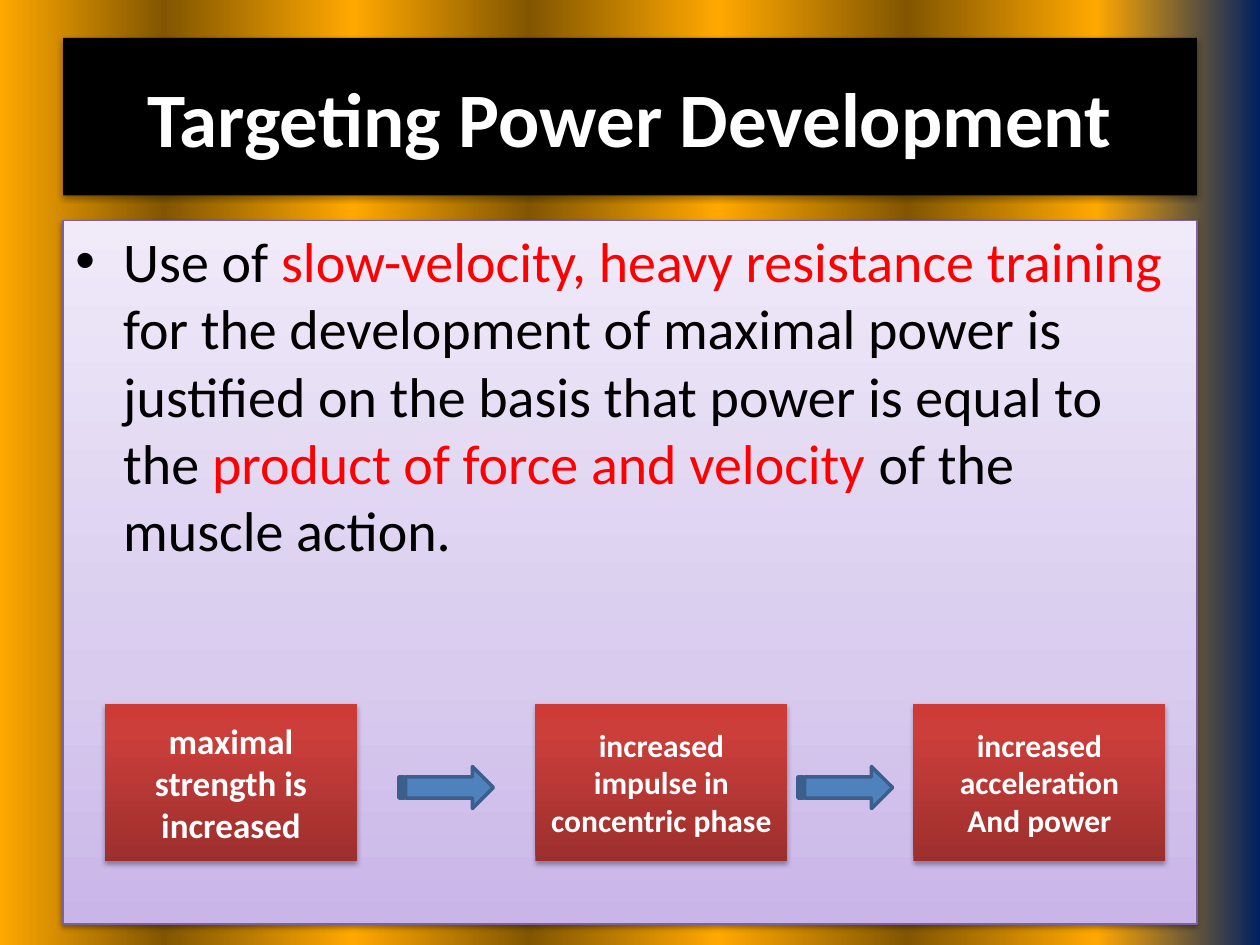
from lxml.etree import SubElement
from pptx import Presentation
from pptx.dml.color import RGBColor
from pptx.enum.shapes import MSO_SHAPE
from pptx.enum.text import MSO_ANCHOR, PP_ALIGN
from pptx.oxml.ns import qn
from pptx.util import Inches, Pt

color = RGBColor.from_string


def set_gradient(fill, owner, stops, angle):
    """Fill with (percent, colour) stops; the angle runs clockwise."""
    fill.gradient()
    gradient = owner.find(".//" + qn("a:gradFill"))
    for child in list(gradient):
        gradient.remove(child)
    stop_list = SubElement(gradient, qn("a:gsLst"))
    for percent, value in stops:
        stop = SubElement(stop_list, qn("a:gs"), pos=str(percent * 1000))
        SubElement(stop, qn("a:srgbClr"), val=value)
    SubElement(gradient, qn("a:lin"), ang=str(angle * 60000), scaled="0")


def add_shadow(shape, distance, opacity):
    """Cast a soft black shadow straight down."""
    shape.shadow.inherit = False
    effects = shape.element.spPr.find(qn("a:effectLst"))
    shadow = SubElement(effects, qn("a:outerShdw"), blurRad=str(Pt(3.1)),
                        dist=str(Pt(distance)), dir="5400000", rotWithShape="0")
    black = SubElement(shadow, qn("a:srgbClr"), val="000000")
    SubElement(black, qn("a:alpha"), val=str(opacity * 1000))


presentation = Presentation()
presentation.slide_width, presentation.slide_height = Inches(10), Inches(7.5)
slide = presentation.slides.add_slide(presentation.slide_layouts[5])
cell = presentation.slide_width // 120  # grid of 120 columns by 90 rows
margin, content_width = 6 * cell, 108 * cell

# Background: gold and brown bands with a navy right edge
bands = [(0, "002060"), (13, "FFA800"), (28, "825600"), (43, "FFA800"),
         (58, "825600"), (72, "FFA800"), (87, "825600"), (100, "FFA800")]
set_gradient(slide.background.fill, slide.element, bands, 180)

# Title bar
title = slide.shapes.title
title.left, title.top = margin, int(3.6 * cell)
title.width, title.height = content_width, 15 * cell
title.fill.solid()
title.fill.fore_color.rgb = color("000000")
add_shadow(title, 1.8, 35)
title.text_frame.text = "Targeting Power Development"
title.text_frame.vertical_anchor = MSO_ANCHOR.MIDDLE
paragraph = title.text_frame.paragraphs[0]
paragraph.alignment = PP_ALIGN.CENTER
paragraph.font.name, paragraph.font.size, paragraph.font.bold = "Calibri", Pt(44), True
paragraph.font.color.rgb = color("FFFFFF")

# Panel with the bulleted statement
panel = slide.shapes.add_shape(MSO_SHAPE.RECTANGLE, margin, 21 * cell,
                               content_width, 67 * cell)
set_gradient(panel.fill, panel.element,
             [(0, "C9B5E8"), (35, "D8CBEE"), (100, "F0EAF9")], 270)
panel.line.color.rgb, panel.line.width = color("7D60A0"), Pt(0.75)
add_shadow(panel, 1.6, 38)
panel.text_frame.vertical_anchor = MSO_ANCHOR.TOP
paragraph = panel.text_frame.paragraphs[0]
paragraph.alignment = PP_ALIGN.LEFT
paragraph.space_before = Pt(6.4)
paragraph.font.name, paragraph.font.size = "Calibri", Pt(32)
properties = paragraph._p.get_or_add_pPr()
properties.set("marL", str(Inches(0.38)))
properties.set("indent", str(-Inches(0.38)))
bullet_font = SubElement(properties, qn("a:buFont"), typeface="Arial")
bullet = SubElement(properties, qn("a:buChar"), char="•")
properties.find(qn("a:defRPr")).addprevious(bullet_font)
bullet_font.addnext(bullet)
for text, value in [
    ("Use of ", "000000"),
    ("slow-velocity, heavy resistance training ", "FF0000"),
    ("for the development of maximal power is justified on the basis "
     "that power is equal to the ", "000000"),
    ("product of force and velocity ", "FF0000"),
    ("of the muscle action.", "000000"),
]:
    run = paragraph.add_run()
    run.text = text
    run.font.color.rgb = color(value)

# Chain of effects: red boxes
for column, size, text in [
    (10, 20, "maximal strength is increased"),
    (51, 18, "increased impulse in concentric phase"),
    (87, 18, "increased acceleration\nAnd power"),
]:
    box = slide.shapes.add_shape(MSO_SHAPE.RECTANGLE, column * cell, 67 * cell,
                                 24 * cell, 15 * cell)
    set_gradient(box.fill, box.element,
                 [(0, "9C2F2D"), (80, "CB3E3A"), (100, "CE3B37")], 270)
    box.line.fill.background()
    add_shadow(box, 1.8, 35)
    box.text_frame.text = text
    box.text_frame.vertical_anchor = MSO_ANCHOR.MIDDLE
    for paragraph in box.text_frame.paragraphs:
        paragraph.alignment = PP_ALIGN.CENTER
        paragraph.font.name, paragraph.font.size = "Calibri", Pt(size)
        paragraph.font.bold = True
        paragraph.font.color.rgb = color("FFFFFF")

# Arrows between the boxes
for column in (38, 76):
    arrow = slide.shapes.add_shape(MSO_SHAPE.STRIPED_RIGHT_ARROW, column * cell,
                                   73 * cell, 9 * cell, 4 * cell)
    arrow.fill.solid()
    arrow.fill.fore_color.rgb = color("4F81BD")
    arrow.line.color.rgb, arrow.line.width = color("3A5F8C"), Pt(2)
    arrow.shadow.inherit = False

presentation.save("out.pptx")
